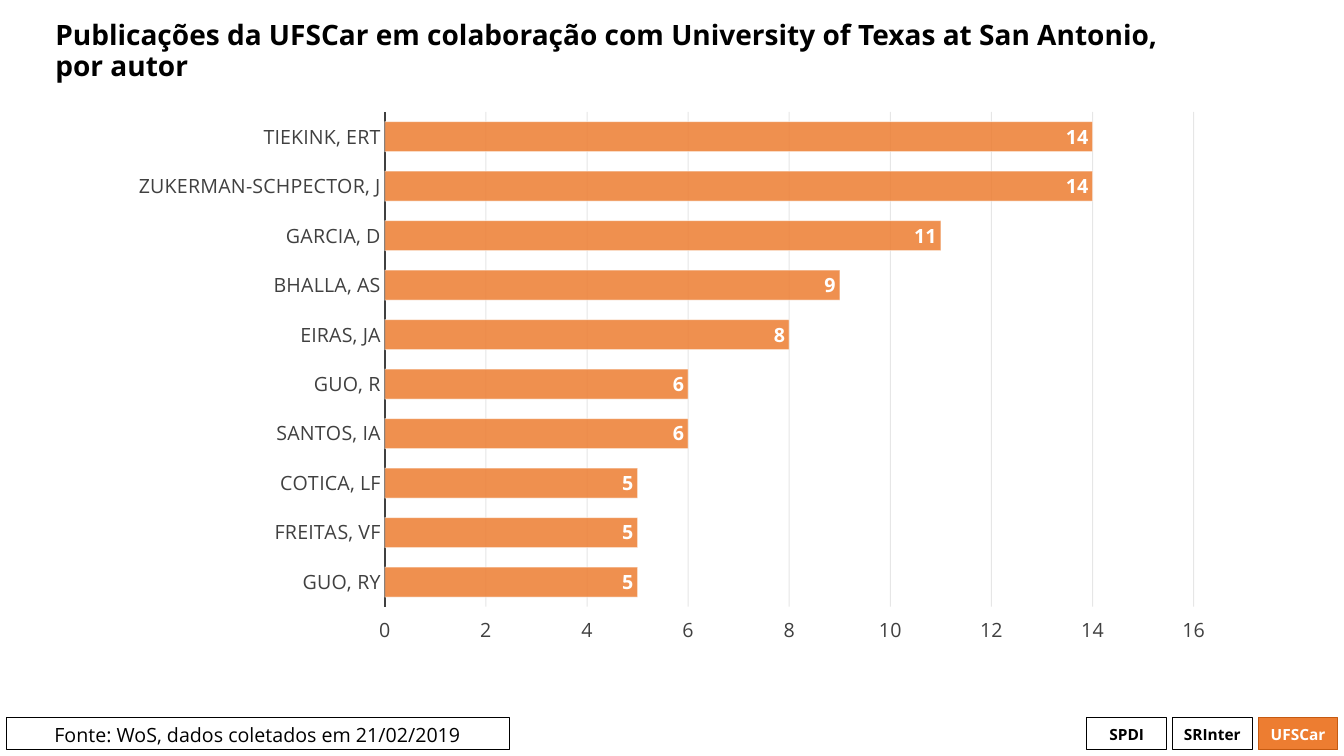
from dataclasses import dataclass

from lxml.etree import SubElement
from pptx import Presentation
from pptx.chart.data import CategoryChartData
from pptx.dml.color import RGBColor
from pptx.enum.chart import (XL_CHART_TYPE, XL_LABEL_POSITION, XL_TICK_LABEL_POSITION,
                             XL_TICK_MARK)
from pptx.enum.shapes import MSO_SHAPE
from pptx.enum.text import MSO_ANCHOR, PP_ALIGN
from pptx.oxml.ns import qn
from pptx.slide import Slide
from pptx.text.text import Font, TextFrame
from pptx.util import Inches, Pt

FONT = "Open Sans"
COLORS = {
    "black": "000000",
    "white": "FFFFFF",
    "axis": "404040",
    "grid": "0D0D0D",
    "orange": "ED7D31",
    "dark_orange": "C55A11",
}
PUBLICATIONS = {
    "TIEKINK, ERT": 14,
    "ZUKERMAN-SCHPECTOR, J": 14,
    "GARCIA, D": 11,
    "BHALLA, AS": 9,
    "EIRAS, JA": 8,
    "GUO, R": 6,
    "SANTOS, IA": 6,
    "COTICA, LF": 5,
    "FREITAS, VF": 5,
    "GUO, RY": 5,
}
PLOT_AREA = {"x": 0.242, "y": 0.022, "w": 0.728, "h": 0.891}


@dataclass
class FooterBox:
    text: str
    left: float
    width: float = 0.79
    size: float = 11
    bold: bool = True
    fill: str | None = None
    border: str = "black"
    color: str = "black"
    anchor: MSO_ANCHOR = MSO_ANCHOR.MIDDLE


FOOTER = [
    FooterBox("SPDI", 10.78),
    FooterBox("SRInter", 11.63),
    FooterBox("UFSCar", 12.48, fill="orange", border="dark_orange", color="white"),
    FooterBox("Fonte: WoS, dados coletados em 21/02/2019", 0.06, width=4.99,
              size=14, bold=False, anchor=MSO_ANCHOR.TOP),
]


def rgb(name: str) -> RGBColor:
    return RGBColor.from_string(COLORS[name])


def style_font(font: Font, size: float, color: str, bold: bool = False) -> None:
    font.name = FONT
    font.size = Pt(size)
    font.bold = bold
    font.color.rgb = rgb(color)


def write_text(frame: TextFrame, text: str, *, size: float, color: str = "black",
               bold: bool = False, align: PP_ALIGN = PP_ALIGN.LEFT,
               anchor: MSO_ANCHOR = MSO_ANCHOR.MIDDLE,
               line_spacing: float = 1.0) -> None:
    frame.word_wrap = True
    frame.vertical_anchor = anchor
    paragraph = frame.paragraphs[0]
    paragraph.text = text
    paragraph.alignment = align
    paragraph.line_spacing = line_spacing
    for run in paragraph.runs:
        style_font(run.font, size, color, bold)


def set_opacity(color_element, percent: int) -> None:
    SubElement(color_element, qn("a:alpha"), val=str(percent * 1000))


def draw_footer_box(slide: Slide, box: FooterBox) -> None:
    frame = slide.shapes.add_shape(MSO_SHAPE.RECTANGLE, Inches(box.left), Inches(7.12),
                                   Inches(box.width), Inches(0.32))
    frame.shadow.inherit = False
    if box.fill:
        frame.fill.solid()
        frame.fill.fore_color.rgb = rgb(box.fill)
    else:
        frame.fill.background()
    frame.line.color.rgb = rgb(box.border)
    frame.line.width = Pt(0.75)
    write_text(frame.text_frame, box.text, size=box.size, color=box.color,
               bold=box.bold, align=PP_ALIGN.CENTER, anchor=box.anchor)


def draw_title(slide: Slide) -> None:
    title = slide.shapes.add_textbox(Inches(0.45), Inches(0.06), Inches(12.41), Inches(0.91))
    write_text(title.text_frame,
               "Publicações da UFSCar em colaboração com University of Texas at San Antonio,\n"
               "por autor", size=20, bold=True, line_spacing=0.9)


def place_plot_area(chart) -> None:
    plot_area = chart._chartSpace.chart.plotArea
    for old_layout in plot_area.findall(qn("c:layout")):
        plot_area.remove(old_layout)
    layout = SubElement(plot_area, qn("c:layout"))
    plot_area.insert(0, layout)
    manual = SubElement(layout, qn("c:manualLayout"))
    SubElement(manual, qn("c:layoutTarget"), val="inner")
    for side in ("x", "y"):
        SubElement(manual, qn(f"c:{side}Mode"), val="edge")
    for side, share in PLOT_AREA.items():
        SubElement(manual, qn(f"c:{side}"), val=str(share))


def draw_chart(slide: Slide) -> None:
    data = CategoryChartData()
    data.categories = PUBLICATIONS.keys()
    data.add_series("Series 1", PUBLICATIONS.values())
    chart = slide.shapes.add_chart(XL_CHART_TYPE.BAR_CLUSTERED, Inches(1.15), Inches(0.99),
                                   Inches(11.02), Inches(5.51), data).chart
    chart.has_legend = False
    chart.has_title = False
    style_font(chart.font, 14, "black")
    place_plot_area(chart)

    authors, counts = chart.category_axis, chart.value_axis
    for axis in (authors, counts):
        axis.major_tick_mark = axis.minor_tick_mark = XL_TICK_MARK.NONE
        style_font(axis.tick_labels.font, 14, "axis")
    authors.reverse_order = True
    authors.has_major_gridlines = False
    authors.format.line.color.rgb = rgb("axis")
    authors.format.line.width = Pt(1.5)
    counts.tick_label_position = XL_TICK_LABEL_POSITION.HIGH
    counts.minimum_scale, counts.maximum_scale, counts.major_unit = 0, 16, 2
    counts.format.line.fill.background()
    counts.has_major_gridlines = True
    grid = counts.major_gridlines.format.line
    grid.color.rgb = rgb("grid")
    grid.width = Pt(0.75)
    set_opacity(counts._element.xpath("c:majorGridlines//a:srgbClr")[0], 10)

    plot = chart.plots[0]
    plot.gap_width = 65
    plot.vary_by_categories = False
    bars = plot.series[0]
    bars.invert_if_negative = False
    bars.format.fill.solid()
    bars.format.fill.fore_color.rgb = rgb("orange")
    bars.format.line.color.rgb = rgb("white")
    bars.format.line.width = Pt(0.75)
    for color_element, percent in zip(bars._element.xpath("c:spPr//a:srgbClr"), (85, 50)):
        set_opacity(color_element, percent)
    labels = bars.data_labels
    labels.show_value = True
    labels.position = XL_LABEL_POSITION.INSIDE_END
    style_font(labels.font, 14, "white", bold=True)


def main() -> None:
    deck = Presentation()
    deck.slide_width, deck.slide_height = Inches(13.33), Inches(7.5)
    slide = deck.slides.add_slide(deck.slide_layouts[6])
    for box in FOOTER:
        draw_footer_box(slide, box)
    draw_title(slide)
    draw_chart(slide)
    deck.save("out.pptx")


if __name__ == "__main__":
    main()
